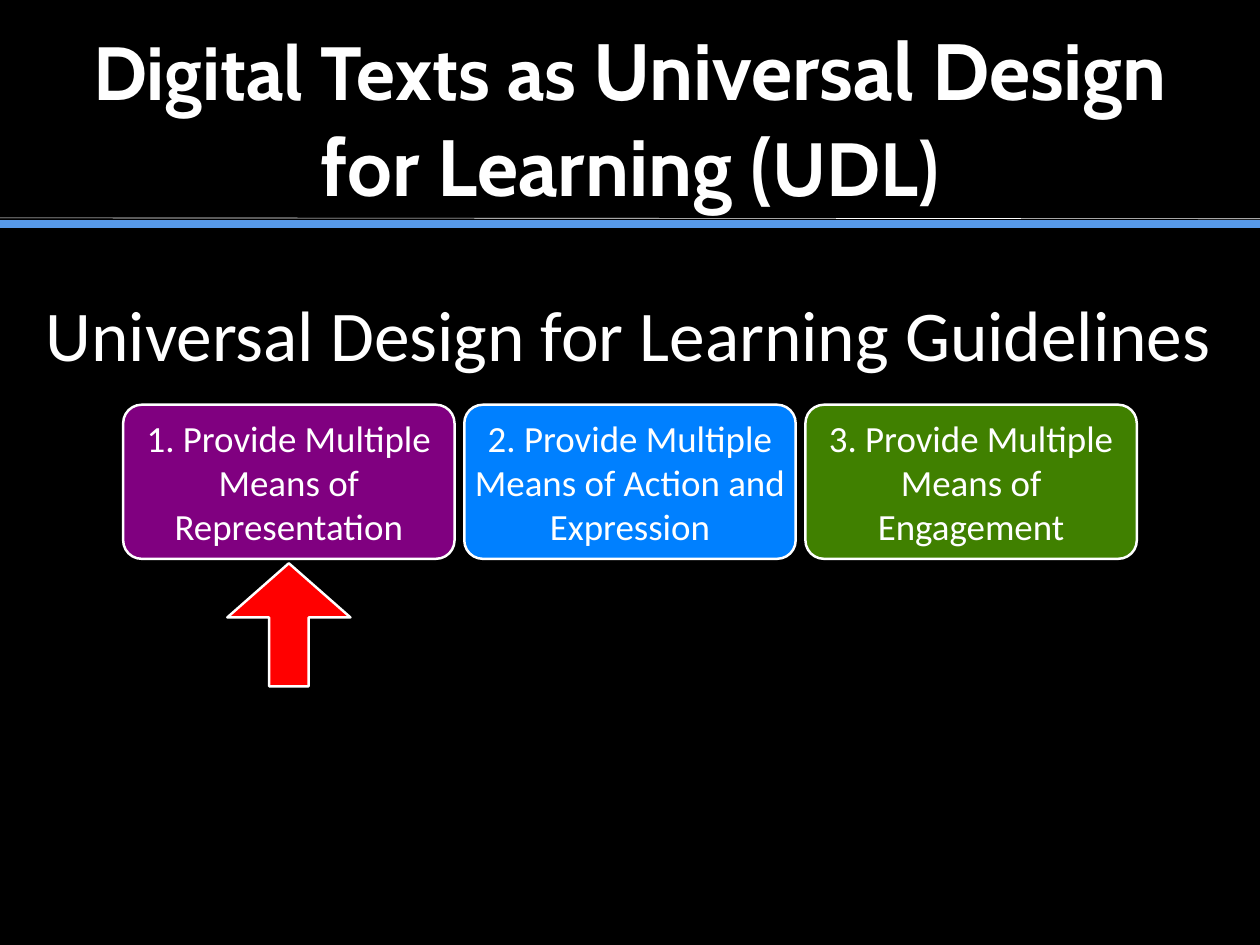
from lxml import etree
from pptx import Presentation
from pptx.dml.color import RGBColor
from pptx.enum.shapes import MSO_CONNECTOR, MSO_SHAPE
from pptx.enum.text import MSO_ANCHOR, PP_ALIGN
from pptx.oxml.ns import qn
from pptx.util import Inches, Pt

STRAIGHT = MSO_CONNECTOR.STRAIGHT
ROUNDED_BOX = MSO_SHAPE.ROUNDED_RECTANGLE
RIGHT_ARROW = MSO_SHAPE.RIGHT_ARROW
MIDDLE = MSO_ANCHOR.MIDDLE
CENTER = PP_ALIGN.CENTER

COLORS = {
    "background": "000000",
    "white": "FFFFFF",
    "rule": "5799E8",
    "representation": "800080",
    "action": "0080FF",
    "engagement": "408000",
    "arrow": "FF0000",
}
SLIDE_WIDTH = 14.22
SLIDE_HEIGHT = 10.67


class SlideBuilder:
    title_font = "Cabin"
    body_font = "Calibri"

    def __init__(self, slide):
        self.slide = slide
        slide.background.fill.solid()
        slide.background.fill.fore_color.rgb = self.color("background")

    def color(self, name):
        return RGBColor.from_string(COLORS[name])

    def rule(self, start_y, end_y, color, width):
        line = self.slide.shapes.add_connector(
            STRAIGHT, 0, Inches(start_y), Inches(SLIDE_WIDTH), Inches(end_y))
        line.line.color.rgb = self.color(color)
        line.line.width = Pt(width)
        etree.SubElement(line._element.spPr, qn("a:effectLst"))

    def set_text(self, shape, runs, font, margins=(0, 0), bold=False):
        frame = shape.text_frame
        frame.word_wrap = True
        frame.vertical_anchor = MIDDLE
        frame.margin_left = frame.margin_right = Inches(margins[0])
        frame.margin_top = frame.margin_bottom = Inches(margins[1])
        paragraph = frame.paragraphs[0]
        paragraph.alignment = CENTER
        paragraph.font.name = font
        paragraph.font.bold = bold
        paragraph.font.color.rgb = self.color("white")
        if len(runs) == 1:
            paragraph.font.size = Pt(runs[0][1])
        for text, size in runs:
            run = paragraph.add_run()
            run.text = text
            if len(runs) > 1:
                run.font.size = Pt(size)

    def text(self, box, runs, font, **style):
        shape = self.slide.shapes.add_textbox(*map(Inches, box))
        self.set_text(shape, runs, font, **style)

    def shape(self, kind, box, fill, adjustments):
        shape = self.slide.shapes.add_shape(kind, *map(Inches, box))
        shape.shadow.inherit = False
        shape.fill.solid()
        shape.fill.fore_color.rgb = self.color(fill)
        shape.line.color.rgb = self.color("white")
        shape.line.width = Pt(2)
        for index, value in enumerate(adjustments):
            shape.adjustments[index] = value
        return shape

    def guideline(self, box, text, fill):
        shape = self.shape(ROUNDED_BOX, box, fill, [0.12])
        self.set_text(shape, [(text, 30)], self.body_font)

    def up_arrow(self, box):
        shape = self.shape(RIGHT_ARROW, box, "arrow", [0.32, 0.44])
        shape.rotation = 270


def main():
    presentation = Presentation()
    presentation.slide_width = Inches(SLIDE_WIDTH)
    presentation.slide_height = Inches(SLIDE_HEIGHT)
    builder = SlideBuilder(
        presentation.slides.add_slide(presentation.slide_layouts[6]))

    builder.rule(2.53, 2.53, "rule", 7)
    builder.rule(2.46, 2.47, "white", 0.5)
    builder.text(
        (0.71, 0.43, 12.8, 1.78),
        [("Digital Texts as ", 61.2),
         ("Universal Design for Learning (", 64.8),
         ("UDL)", 61.2)],
        builder.title_font, margins=(0.14, 0.07), bold=True)

    guidelines = [
        ("1. Provide Multiple Means of Representation", "representation"),
        ("2. Provide Multiple Means of Action and Expression", "action"),
        ("3. Provide Multiple Means of Engagement", "engagement"),
    ]
    left, top, width, height, pitch = 1.39, 4.57, 3.74, 1.74, 3.85
    for index, (text, fill) in enumerate(guidelines):
        builder.guideline(
            (left + index * pitch, top, width, height), text, fill)

    builder.text((0.28, 3.25, 13.62, 1.03),
                 [("Universal Design for Learning Guidelines", 58)],
                 builder.body_font)

    arrow_size = 1.39
    builder.up_arrow((left + (width - arrow_size) / 2, 6.36,
                      arrow_size, arrow_size))

    presentation.save("out.pptx")


if __name__ == "__main__":
    main()
